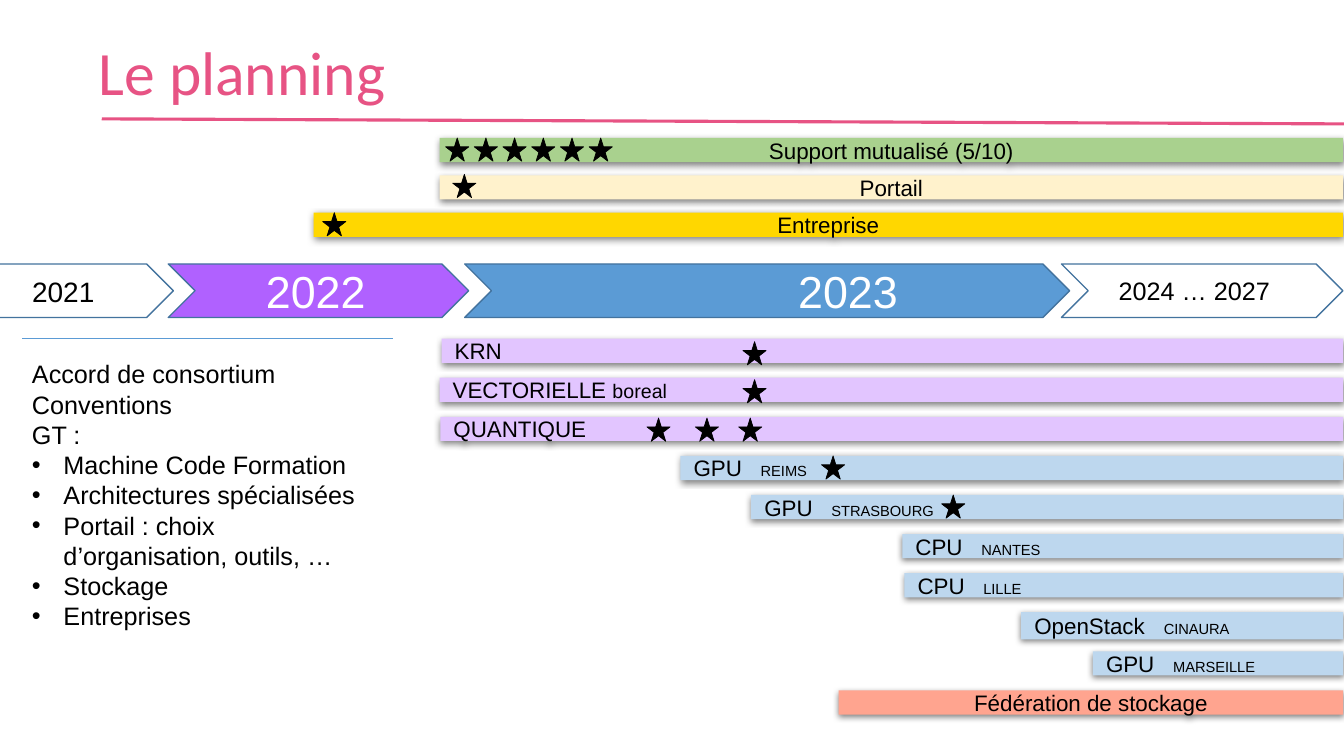
from dataclasses import dataclass

import pptx
import pptx.dml.color
import pptx.enum.shapes
import pptx.enum.text
import pptx.oxml
import pptx.oxml.ns
import pptx.util

Pt = pptx.util.Pt
Preset = pptx.enum.shapes.MSO_SHAPE
Align = pptx.enum.text.PP_ALIGN
Anchor = pptx.enum.text.MSO_ANCHOR
NS = pptx.oxml.ns.nsdecls("a")
SHADOW = (f'<a:effectLst {NS}><a:outerShdw blurRad="57150" dist="19050" dir="5400000" '
          'algn="ctr" rotWithShape="0"><a:srgbClr val="000000"><a:alpha val="50000"/>'
          '</a:srgbClr></a:outerShdw></a:effectLst>')


@dataclass(frozen=True)
class Theme:
    pink: str = "E75384"
    black: str = "000000"
    white: str = "FFFFFF"
    outline: str = "43739E"
    blue: str = "5B9BD5"
    violet: str = "B061FF"
    lilac: str = "E2C5FF"
    sky: str = "BDD7EE"
    green: str = "A9D18E"
    cream: str = "FFF2CC"
    gold: str = "FFD700"
    salmon: str = "FFA48F"
    heading_font: str = "Calibri"
    body_font: str = "Arial"
    title: float = 44
    year: float = 32
    first_year: float = 20
    body: float = 18
    bar: float = 16
    machine: float = 14
    site: float = 10.5


THEME = Theme()


@dataclass(frozen=True)
class Box:
    left: float
    top: float
    width: float
    height: float

    def emu(self):
        return Pt(self.left), Pt(self.top), Pt(self.width), Pt(self.height)


@dataclass(frozen=True)
class Bar:
    offset: float
    color: str
    label: str
    detail: str = ""
    detail_size: float = THEME.site
    tab: float = 0
    centred: bool = False
    stars: tuple = ()
    star_drop: float = 0
    height: float = 17.3


def rgb(value):
    return pptx.dml.color.RGBColor.from_string(value)


def add_run(paragraph, text, size, color=THEME.black, font=THEME.body_font):
    run = paragraph.add_run()
    run.text = text
    run.font.size = Pt(size)
    run.font.name = font
    run.font.color.rgb = rgb(color)


def add_preset(slide, preset, box, fill=None, line=None, weight=1):
    shape = slide.shapes.add_shape(preset, *box.emu())
    shape.shadow.inherit = False
    if fill:
        shape.fill.solid()
        shape.fill.fore_color.rgb = rgb(fill)
    else:
        shape.fill.background()
    if line:
        shape.line.color.rgb = rgb(line)
        shape.line.width = Pt(weight)
    else:
        shape.line.fill.background()
    return shape


def add_text_box(slide, box):
    frame = slide.shapes.add_textbox(*box.emu()).text_frame
    frame.word_wrap = True
    return frame


def add_rule(slide, box, color, weight):
    """Draw a line from the top left to the bottom right of the box."""
    rule = slide.shapes.add_connector(
        pptx.enum.shapes.MSO_CONNECTOR.STRAIGHT, Pt(box.left), Pt(box.top),
        Pt(box.left + box.width), Pt(box.top + box.height))
    rule.line.color.rgb = rgb(color)
    rule.line.width = Pt(weight)
    rule._element.spPr.append(pptx.oxml.parse_xml(f"<a:effectLst {NS}/>"))


def add_heading(slide, box):
    frame = add_text_box(slide, box)
    frame.vertical_anchor = Anchor.MIDDLE
    frame.paragraphs[0].line_spacing = 0.9
    add_run(frame.paragraphs[0], "Le planning", THEME.title, THEME.pink, THEME.heading_font)
    rule_left = box.left + 9.3
    add_rule(slide, Box(rule_left, box.top + 83.5, 960 - rule_left, 3.6), THEME.pink, 2.25)


def add_bar(slide, box, bar):
    shape = add_preset(slide, Preset.RECTANGLE, box, bar.color)
    properties = shape._element.spPr
    properties.remove(properties.find(pptx.oxml.ns.qn("a:effectLst")))
    properties.append(pptx.oxml.parse_xml(SHADOW))
    frame = shape.text_frame
    frame.vertical_anchor = Anchor.MIDDLE
    frame.margin_left = frame.margin_right = frame.margin_top = frame.margin_bottom = Pt(9.4)
    label = frame.paragraphs[0]
    label.alignment = Align.CENTER if bar.centred else Align.LEFT
    if bar.tab:
        label._p.get_or_add_pPr().append(pptx.oxml.parse_xml(
            f'<a:tabLst {NS}><a:tab pos="{Pt(bar.tab)}" algn="l"/></a:tabLst>'))
    gap = "\t" if bar.tab else " " if bar.detail else ""
    add_run(label, bar.label + gap, THEME.bar)
    if bar.detail:
        add_run(label, bar.detail, bar.detail_size)
    for star in bar.stars:
        add_preset(slide, Preset.STAR_5_POINT,
                   Box(box.left + star, box.top + bar.star_drop, 16.6, 16.6),
                   THEME.black, THEME.black, 0.5)


def add_bars(slide, box, bars):
    """Stack the bars at an equal pitch; each one runs to the right edge of the box."""
    pitch = box.height / len(bars)
    for row, bar in enumerate(bars):
        add_bar(slide, Box(box.left + bar.offset, box.top + row * pitch,
                           box.width - bar.offset, bar.height), bar)


def add_timeline(slide, box):
    years = [  # start, width, fill, label, label offset, label drop, label width, size, colour
        (-30.2, 154, None, "2021", 46, 4.3, 98, THEME.first_year, THEME.black),
        (120.2, 214.6, THEME.violet, "2022", 62.6, -3.6, 98, THEME.year, THEME.white),
        (332, 432, THEME.blue, "2023", 231, -3.6, 98, THEME.year, THEME.white),
        (758.2, 201, None, "2024 … 2027", 33.8, 4.3, 166, THEME.body, THEME.black),
    ]
    for start, width, fill, label, offset, drop, label_width, size, color in years:
        left = box.left + start
        add_preset(slide, Preset.CHEVRON, Box(left, box.top, width, box.height),
                   fill, THEME.outline)
        frame = add_text_box(slide, Box(left + offset, box.top + drop, label_width, size * 1.44))
        add_run(frame.paragraphs[0], label, size, color)


def add_agreements(slide, box):
    add_rule(slide, Box(box.left, box.top, 265, 0), THEME.blue, 0.5)
    frame = add_text_box(slide, Box(box.left, box.top + 10.8, box.width, box.height - 10.8))
    topics = ["Accord de consortium", "Conventions", "GT :"]
    groups = ["Machine Code Formation", "Architectures spécialisées",
              "Portail : choix d’organisation, outils, …", "Stockage", "Entreprises"]
    for row, text in enumerate(topics + groups):
        paragraph = frame.add_paragraph() if row else frame.paragraphs[0]
        if row >= len(topics):
            properties = paragraph._p.get_or_add_pPr()
            properties.set("marL", str(Pt(22.5)))
            properties.set("indent", str(-Pt(22.5)))
            properties.append(pptx.oxml.parse_xml(f'<a:buFont {NS} typeface="Arial"/>'))
            properties.append(pptx.oxml.parse_xml(f'<a:buChar {NS} char="•"/>'))
        add_run(paragraph, text, THEME.body)


def main():
    deck = pptx.Presentation()
    deck.slide_width, deck.slide_height = Pt(960), Pt(540)
    slide = deck.slides.add_slide(deck.slide_layouts[6])

    services = [
        Bar(90, THEME.green, "Support mutualisé (5/10)", centred=True,
            stars=tuple(4.3 + 20.5 * i for i in range(6))),
        Bar(90, THEME.cream, "Portail", centred=True, stars=(9.4,), star_drop=-0.7),
        Bar(0, THEME.gold, "Entreprise", centred=True, stars=(6.5,)),
    ]
    resources = [
        Bar(1.4, THEME.lilac, "KRN", stars=(215.3,), star_drop=2.2),
        Bar(0, THEME.lilac, "VECTORIELLE", "boreal", THEME.machine,
            stars=(216.7,), star_drop=1.4),
        Bar(0.5, THEME.lilac, "QUANTIQUE", stars=(147.6, 182.2, 213.1), star_drop=0.9),
        Bar(172, THEME.sky, "GPU", "REIMS", tab=48, stars=(100.8,)),
        Bar(222.5, THEME.sky, "GPU", "STRASBOURG", tab=48, stars=(136.1,)),
        Bar(330.5, THEME.sky, "CPU", "NANTES", tab=47),
        Bar(332, THEME.sky, "CPU", "LILLE", tab=47),
        Bar(415.4, THEME.sky, "OpenStack", "CINAURA", tab=92.5, height=19.4),
        Bar(466.6, THEME.sky, "GPU", "MARSEILLE", tab=48),
        Bar(285, THEME.salmon, "Fédération de stockage", centred=True),
    ]
    add_heading(slide, Box(63.4, 1.4, 828, 104.4))
    add_bars(slide, Box(224, 98.6, 735.3, 80), services)
    add_timeline(slide, Box(0, 188.6, 960, 38.2))
    add_bars(slide, Box(314, 241.9, 645.5, 279.2), resources)
    add_agreements(slide, Box(15.8, 241.9, 254.2, 214.6))
    deck.save("out.pptx")


if __name__ == "__main__":
    main()
